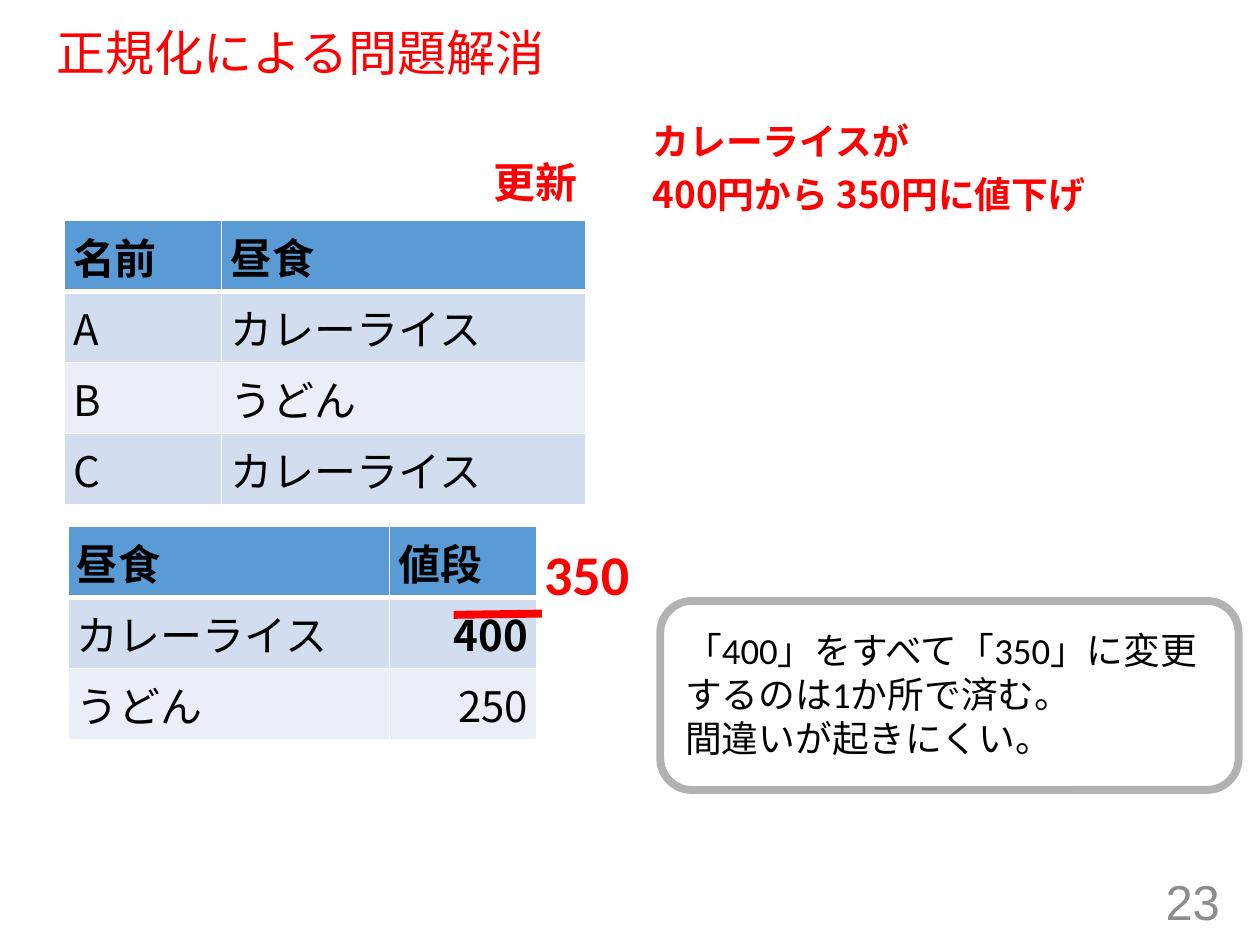
from lxml import etree
from pptx import Presentation
from pptx import util as u
from pptx.dml.color import RGBColor
from pptx.enum import shapes, text
from pptx.oxml import ns

RED = RGBColor(0xFF, 0x00, 0x00)
BLACK = RGBColor(0x00, 0x00, 0x00)
GRAY = RGBColor(0x8C, 0x8C, 0x8C)
HEADER = RGBColor(0x5B, 0x9B, 0xD5)
BANDS = (RGBColor(0xEA, 0xEF, 0xF7), RGBColor(0xD2, 0xDE, 0xEF))
JAPANESE = "Noto Sans CJK JP"
RIGHT = text.PP_ALIGN.RIGHT
ROW_HEIGHT = 0.56


def child(parent, tag, **attributes):
    return etree.SubElement(parent, ns.qn(tag), attributes)


def apply(target, values):
    for name, value in values.items():
        setattr(target, name, value)


class SlideBuilder:
    margins = {
        "margin_left": u.Inches(0.07), "margin_right": u.Inches(0.07),
        "margin_top": u.Inches(0.04), "margin_bottom": u.Inches(0.04),
    }

    def __init__(self, presentation):
        self.slide = presentation.slides.add_slide(presentation.slide_layouts[6])

    def add_text(self, paragraph, content, size, font, color, bold=False):
        run = paragraph.add_run()
        run.text = content
        apply(run.font, {"size": u.Pt(size), "name": font, "bold": bold})
        run.font.color.rgb = color
        if font == JAPANESE:
            child(run.font._element, "a:ea", typeface=font)

    def text_box(self, box, lines, size, font, color, bold=False, frame_format=None, paragraph_format=None):
        shape = self.slide.shapes.add_textbox(*map(u.Inches, box))
        frame = shape.text_frame
        apply(frame, {"word_wrap": True, **(frame_format or {})})
        for index, line in enumerate(lines):
            paragraph = frame.add_paragraph() if index else frame.paragraphs[0]
            apply(paragraph, paragraph_format or {})
            self.add_text(paragraph, line, size, font, color, bold)

    def border(self, cell, is_header):
        properties = cell._tc.get_or_add_tcPr()
        fill = properties[0]
        for side in ("L", "R", "T", "B"):
            width = u.Pt(3 if is_header and side == "B" else 1)
            line = child(properties, f"a:ln{side}", w=str(width))
            child(child(line, "a:solidFill"), "a:srgbClr", val="FFFFFF")
        properties.append(fill)

    def table(self, left, top, widths, rows, bold_values=(), right_values=()):
        size = (sum(widths), ROW_HEIGHT * len(rows))
        frame = self.slide.shapes.add_table(len(rows), len(widths), *map(u.Inches, (left, top, *size)))
        table = frame.table
        for column, width in zip(table.columns, widths):
            column.width = u.Inches(width)
        for row_index, values in enumerate(rows):
            is_header = row_index == 0
            table.rows[row_index].height = u.Inches(ROW_HEIGHT)
            for column_index, value in enumerate(values):
                cell = table.cell(row_index, column_index)
                apply(cell, self.margins)
                cell.fill.solid()
                cell.fill.fore_color.rgb = HEADER if is_header else BANDS[row_index % 2]
                self.border(cell, is_header)
                paragraph = cell.text_frame.paragraphs[0]
                if value in right_values:
                    paragraph.alignment = RIGHT
                self.add_text(paragraph, value, 24, JAPANESE, BLACK, is_header or value in bold_values)

    def line(self, start, end, color, width):
        connector = self.slide.shapes.add_connector(
            shapes.MSO_CONNECTOR.STRAIGHT, *map(u.Inches, (*start, *end)))
        connector.line.color.rgb = color
        connector.line.width = u.Pt(width)
        child(connector._element.spPr, "a:effectLst")

    def rounded_outline(self, box, color, width, opacity):
        shape = self.slide.shapes.add_shape(
            shapes.MSO_SHAPE.ROUNDED_RECTANGLE, *map(u.Inches, box))
        shape.shadow.inherit = False
        shape.fill.background()
        shape.line.color.rgb = color
        shape.line.width = u.Pt(width)
        color_element = shape._element.spPr.find(".//" + ns.qn("a:srgbClr"))
        child(color_element, "a:alpha", val=str(opacity * 1000))


def main():
    presentation = Presentation()
    apply(presentation, {"slide_width": u.Inches(10), "slide_height": u.Inches(7.5)})
    builder = SlideBuilder(presentation)
    middle = {"vertical_anchor": text.MSO_ANCHOR.MIDDLE}

    builder.table(0.54, 4.18, (2.55, 1.17),
                  (("昼食", "値段"), ("カレーライス", "400"), ("うどん", "250")),
                  bold_values=("400",), right_values=("400", "250"))
    builder.table(0.51, 1.75, (1.25, 2.89),
                  (("名前", "昼食"), ("A", "カレーライス"), ("B", "うどん"), ("C", "カレーライス")))
    builder.line((3.6, 4.88), (4.3, 4.87), RED, 4.5)
    builder.text_box((4.22, 4.23, 0.89, 0.64), ["350"], 32, "Calibri", RED, True,
                     {"word_wrap": False})
    builder.text_box((0.35, 0.19, 9.25, 0.51), ["正規化による問題解消"], 28, "Arial", RED,
                     frame_format=middle, paragraph_format={"line_spacing": 0.9})
    builder.text_box((7.53, 6.95, 2.25, 0.4), ["23"], 28, "Arial", GRAY,
                     frame_format=middle, paragraph_format={"alignment": RIGHT})
    builder.text_box((3.82, 1.19, 3.08, 0.5), ["更新"], 24, JAPANESE, RED, True)
    builder.text_box((5.11, 0.94, 4.59, 2.33), ["カレーライスが", "400円から 350円に値下げ"],
                     21, JAPANESE, RED, True, builder.margins,
                     {"line_spacing": 0.9, "space_before": u.Pt(8)})
    builder.rounded_outline((5.24, 4.77, 4.59, 1.5), BLACK, 4.5, 30)
    builder.text_box((5.34, 4.93, 4.37, 1.16),
                     ["「400」をすべて「350」に変更するのは1か所で済む。", "間違いが起きにくい。"],
                     21, "Calibri", BLACK)
    presentation.save("out.pptx")


if __name__ == "__main__":
    main()
